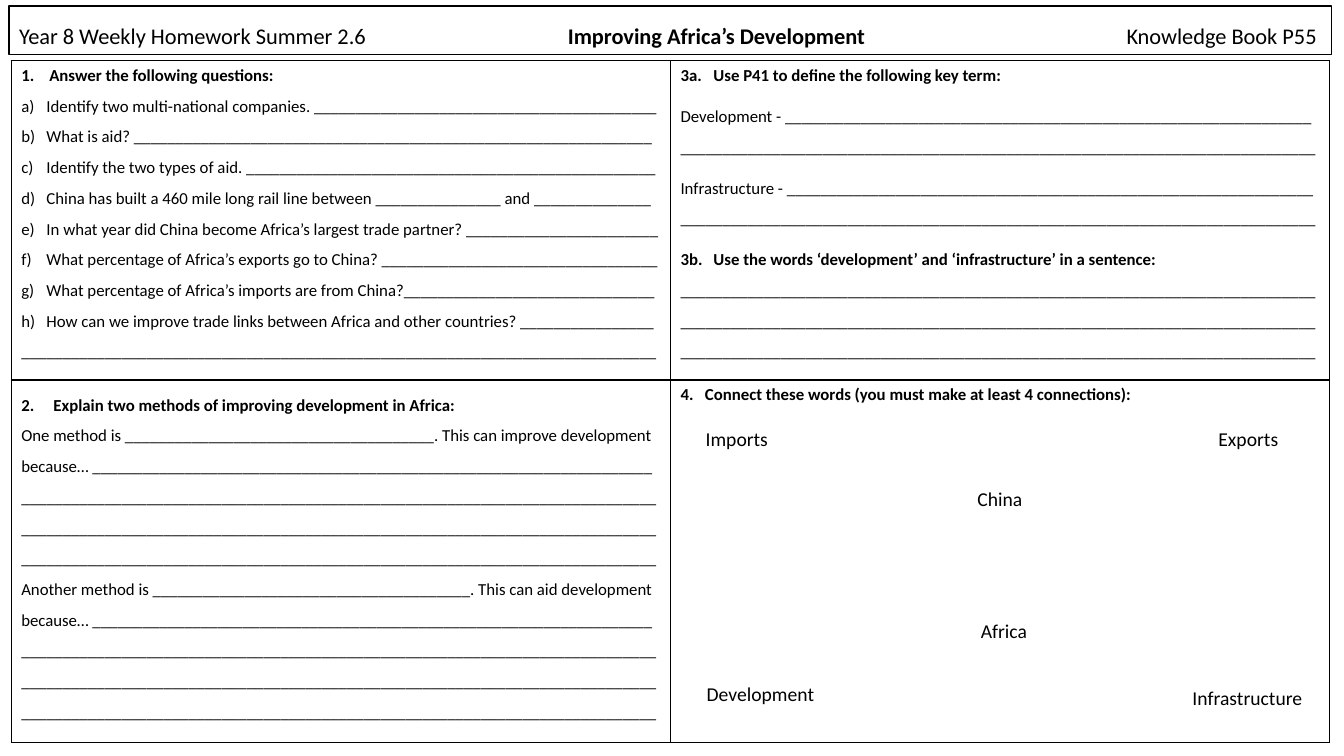
from lxml import etree
from pptx import Presentation
from pptx import util as u
from pptx.dml import color
from pptx.enum import shapes, text
from pptx.oxml import ns

THEME = {
    "font": "Calibri",
    "ink": color.RGBColor(0, 0, 0),
    "paper": color.RGBColor(255, 255, 255),
    "title_size": 16,
    "body_size": 12,
    "word_size": 14,
    "line": 1,
}

RULE = "_" * 76

HEADER = ["Year 8 Weekly Homework Summer 2.6", "\tImproving Africa’s Development", "\tKnowledge Book P55"]
HEADER_TABS = [(392, "l"), (927, "r")]

QUESTIONS = [
    "Identify two multi-national companies. " + "_" * 41,
    "What is aid? " + "_" * 62,
    "Identify the two types of aid. " + "_" * 49,
    "China has built a 460 mile long rail line between " + "_" * 15 + " and " + "_" * 14,
    "In what year did China become Africa’s largest trade partner? " + "_" * 23,
    "What percentage of Africa’s exports go to China? " + "_" * 33,
    "What percentage of Africa’s imports are from China?" + "_" * 30,
    "How can we improve trade links between Africa and other countries? " + "_" * 16,
]

TASKS = [
    [
        [{"text": "1.\tAnswer the following questions:", "tab": 20}]
        + [{"text": question, "spacing": 1.5, "lettered": True} for question in QUESTIONS]
        + [{"text": RULE, "spacing": 1.5}],
        [
            {"text": "3a.\tUse P41 to define the following key term:", "tab": 23.5},
            {"text": "Development - " + "_" * 63, "spacing": 2},
            {"text": RULE, "spacing": 1.5},
            {"text": "Infrastructure - " + "_" * 63, "spacing": 2},
            {"text": RULE, "spacing": 1.5},
            {"text": "3b.\tUse the words ‘development’ and ‘infrastructure’ in a sentence:",
             "tab": 23.5, "before": 14.6},
            {"text": RULE * 2, "spacing": 1.5},
            {"text": RULE, "spacing": 1.5},
        ],
    ],
    [
        [
            {"text": "2.\tExplain two methods of improving development in Africa:", "tab": 23, "spacing": 1.5},
            {"text": "One method is " + "_" * 37 + ". This can improve development because… " + "_" * 67,
             "spacing": 1.5},
            {"text": RULE * 3, "spacing": 1.5},
            {"text": "Another method is " + "_" * 38 + ". This can aid development because… " + "_" * 67,
             "spacing": 1.5},
            {"text": RULE, "spacing": 1.5},
            {"text": RULE * 2, "spacing": 1.5},
        ],
        [{"text": "4.\tConnect these words (you must make at least 4 connections):", "tab": 17.5}],
    ],
]

WORDS = [
    ("Exports", 891.7, 301.7),
    ("Infrastructure", 891, 486.7),
    ("Imports", 526.3, 301.7),
    ("Development", 543.2, 483.8),
    ("Africa", 717.1, 438.5),
    ("China", 714.2, 344.2),
]
WORD_WIDTH, WORD_HEIGHT = 106, 24.5

COLUMN_WIDTH = 470.9
ROW_HEIGHTS = [228.2, 259.2]


def style_span(span, size, bold=False):
    span.font.name = THEME["font"]
    span.font.size = u.Pt(size)
    span.font.bold = bold
    span.font.color.rgb = THEME["ink"]


def add_tabs(para, stops):
    tabs = etree.SubElement(para._p.get_or_add_pPr(), ns.qn("a:tabLst"))
    for position, side in stops:
        etree.SubElement(tabs, ns.qn("a:tab"), pos=str(int(u.Pt(position))), algn=side)


def add_letter(para):
    properties = para._p.get_or_add_pPr()
    indent = int(u.Pt(18))
    properties.set("marL", str(indent))
    properties.set("indent", str(-indent))
    etree.SubElement(properties, ns.qn("a:buFont"), typeface="+mj-lt")
    etree.SubElement(properties, ns.qn("a:buAutoNum"), type="alphaLcParenR")


def add_borders(cell):
    properties = cell._tc.get_or_add_tcPr()
    for place, side in enumerate(["lnL", "lnR", "lnT", "lnB"]):
        border = etree.Element(ns.qn("a:" + side), w=str(int(u.Pt(THEME["line"]))))
        fill = etree.SubElement(border, ns.qn("a:solidFill"))
        etree.SubElement(fill, ns.qn("a:srgbClr"), val=str(THEME["ink"]))
        properties.insert(place, border)


def fill_cell(cell, lines):
    cell.fill.solid()
    cell.fill.fore_color.rgb = THEME["paper"]
    add_borders(cell)
    frame = cell.text_frame
    for number, line in enumerate(lines):
        para = frame.add_paragraph() if number else frame.paragraphs[0]
        para.text = line["text"]
        para.line_spacing = line.get("spacing", 1.0)
        para.space_before = u.Pt(line.get("before", 0))
        if "tab" in line:
            add_tabs(para, [(line["tab"], "l")])
        if line.get("lettered"):
            add_letter(para)
        style_span(para.runs[0], THEME["body_size"], "tab" in line)


def add_header(page):
    box = page.shapes.add_shape(shapes.MSO_SHAPE.RECTANGLE, u.Pt(6.5), u.Pt(4.3), u.Pt(944.6), u.Pt(34.6))
    box.shadow.inherit = False
    box.fill.solid()
    box.fill.fore_color.rgb = THEME["paper"]
    box.line.color.rgb = THEME["ink"]
    box.line.width = u.Pt(THEME["line"])
    frame = box.text_frame
    frame.word_wrap = True
    frame.vertical_anchor = text.MSO_ANCHOR.BOTTOM
    para = frame.paragraphs[0]
    para.alignment = text.PP_ALIGN.LEFT
    para.line_spacing = 0.9
    add_tabs(para, HEADER_TABS)
    for number, part in enumerate(HEADER):
        span = para.add_run()
        span.text = part
        style_span(span, THEME["title_size"], number == 1)


def add_tasks(page):
    table = page.shapes.add_table(
        2, 2, u.Pt(8), u.Pt(43.2), u.Pt(2 * COLUMN_WIDTH), u.Pt(sum(ROW_HEIGHTS))).table
    table.first_row = False
    table.horz_banding = False
    for column in table.columns:
        column.width = u.Pt(COLUMN_WIDTH)
    for row, height, tasks in zip(table.rows, ROW_HEIGHTS, TASKS):
        row.height = u.Pt(height)
        for cell, lines in zip(row.cells, tasks):
            fill_cell(cell, lines)


def add_word(page, word, centre, top):
    box = page.shapes.add_textbox(
        u.Pt(centre - WORD_WIDTH / 2), u.Pt(top), u.Pt(WORD_WIDTH), u.Pt(WORD_HEIGHT))
    box.text_frame.word_wrap = True
    para = box.text_frame.paragraphs[0]
    para.text = word
    para.alignment = text.PP_ALIGN.CENTER
    style_span(para.runs[0], THEME["word_size"])


def main():
    deck = Presentation()
    deck.slide_width, deck.slide_height = u.Pt(960), u.Pt(540)
    page = deck.slides.add_slide(deck.slide_layouts[6])
    add_tasks(page)
    add_header(page)
    for word, centre, top in WORDS:
        add_word(page, word, centre, top)
    deck.save("out.pptx")


if __name__ == "__main__":
    main()
